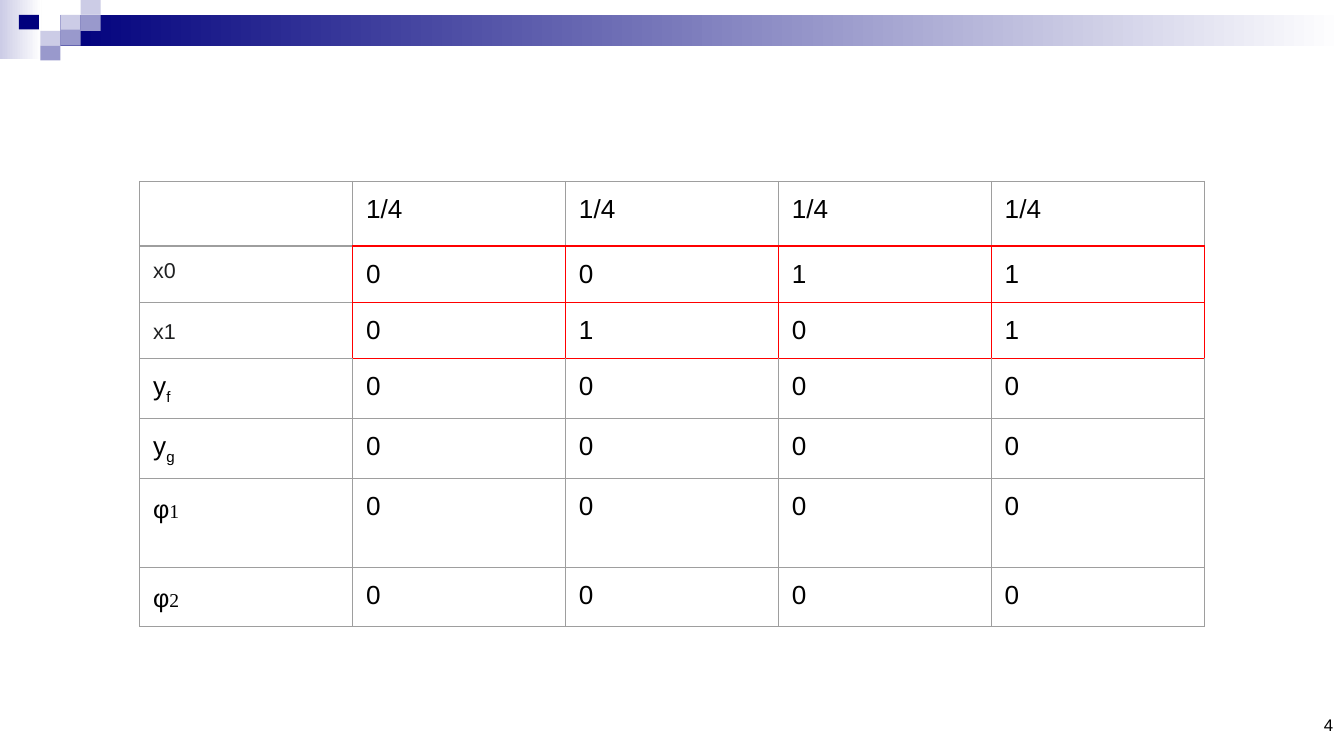
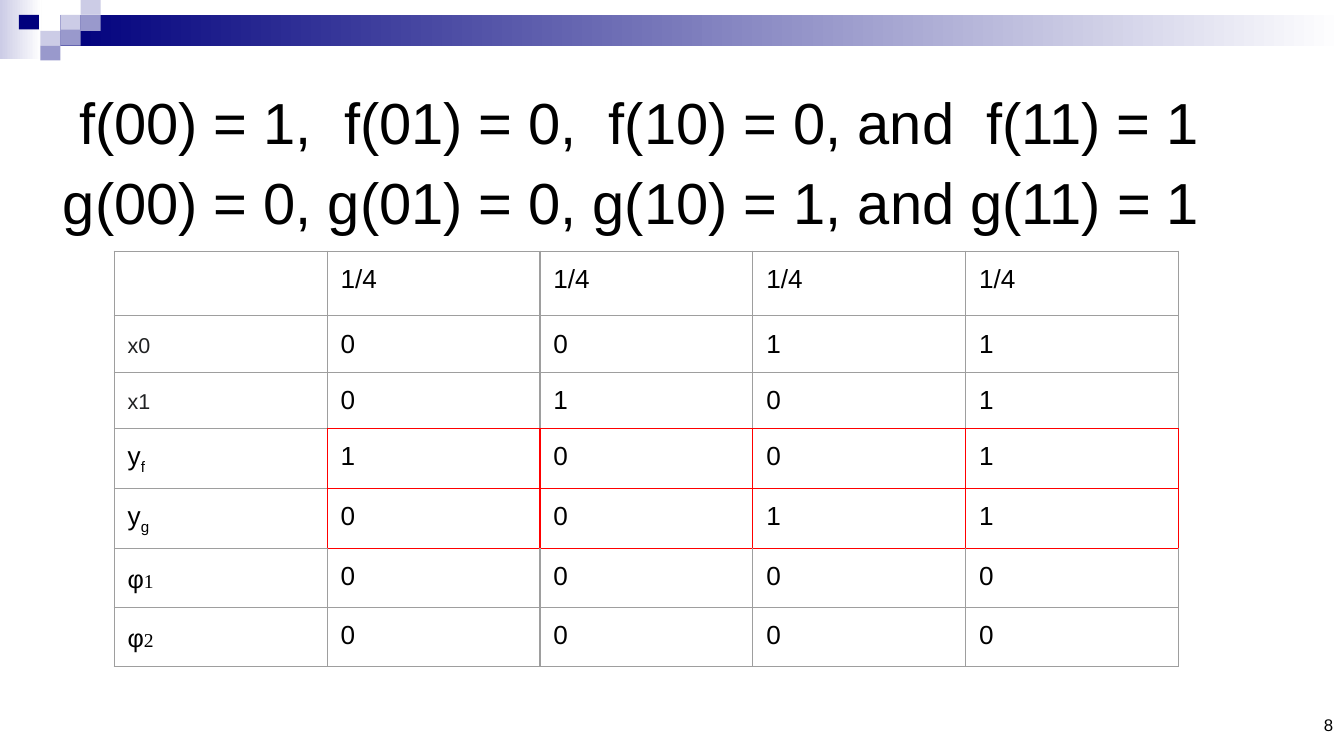
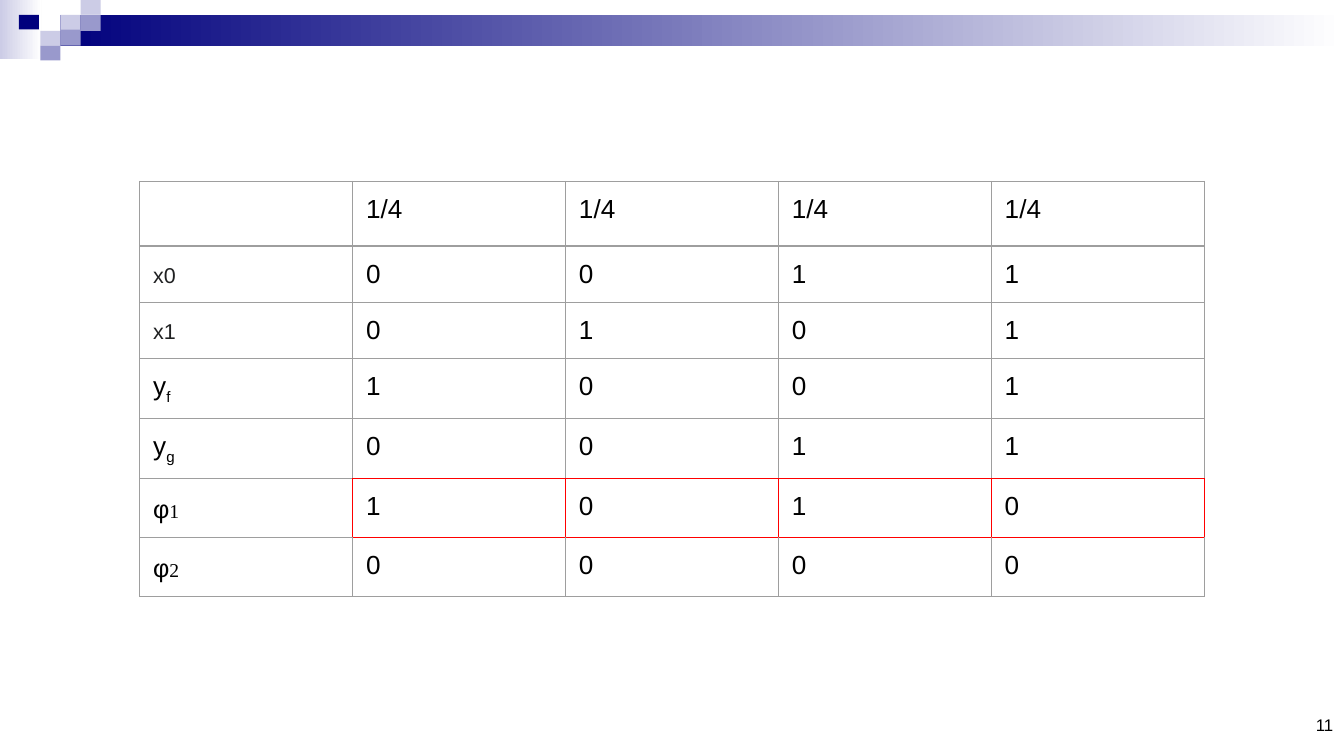
from lxml import etree
from pptx import Presentation
from pptx.dml.color import RGBColor
from pptx.enum import shapes, text
from pptx.oxml import ns
from pptx.util import Inches, Pt

HUES = {
    "navy": "00007D", "mid": "9999CC", "pale": "CCCCE6", "white": "FFFFFF",
    "black": "000000", "ink": "202122", "grid": "9E9E9E", "mark": "FF0000",
}
BODY = {"name": "Arial", "size": Pt(14), "hue": "black"}
LABEL = {**BODY, "size": Pt(11.5), "hue": "ink"}
PHI = {**BODY, "size": Pt(13.5)}
INDEX = {**BODY, "name": "Times New Roman", "size": Pt(10.5)}
PAGE = {**BODY, "size": Pt(9)}
HEAD = {**BODY, "size": Pt(31)}
SUB = {**BODY, "base": "-25000"}

SIDES = ("lnL", "lnR", "lnT", "lnB")
PADS = {"left": 0.1, "right": 0.1, "top": 0.1, "bottom": 0.08}
FADES = [
    ((0, 0, 0.31, 0.44), "pale"),
    ((0.45, 0.11, 9.55, 0.23), "navy"),
]
TILES = [
    (0.45, 0.11, 0.12, "pale"), (0.6, 0, 0.11, "pale"),
    (0.6, 0.11, 0.12, "mid"), (0.3, 0.23, 0.11, "pale"),
    (0.14, 0.11, 0.11, "navy"), (0.45, 0.22, 0.12, "mid"),
    (0.3, 0.34, 0.11, "mid"),
]
TILE = 0.15

LABELS = [
    [],
    [("x0", LABEL), (" ", BODY)],
    [("x1", LABEL), (" ", BODY)],
    [("y", BODY), ("f", SUB)],
    [("y", BODY), ("g", SUB)],
    [("φ", PHI), ("1", INDEX)],
    [("φ", PHI), ("2", INDEX)],
]
RULES = [
    " f(00) = 1,  f(01) = 0,  f(10) = 0, and  f(11) = 1",
    "g(00) = 0, g(01) = 0, g(10) = 1, and g(11) = 1",
]
ROW = 0.42
PAGES = [
    {"page": "4", "box": (1.04, 1.35, 7.92), "marks": (1, 2), "tall": {5: 0.66},
     "bits": ["0011", "0101", "0000", "0000", "0000", "0000"]},
    {"page": "8", "box": (0.85, 1.87, 7.92), "marks": (3, 4), "tall": {0: 0.46},
     "bits": ["0011", "0101", "1001", "0011", "0000", "0000"], "rules": RULES},
    {"page": "11", "box": (1.04, 1.35, 7.92), "marks": (5,), "tall": {},
     "bits": ["0011", "0101", "1001", "0011", "1010", "0000"]},
]


def hue(name):
    return RGBColor.from_string(HUES[name])


def write(para, parts):
    for words, style in parts:
        run = para.add_run()
        run.text = words
        for key, value in style.items():
            if key == "hue":
                run.font.color.rgb = hue(value)
            elif key == "base":
                run._r.get_or_add_rPr().set("baseline", value)
            else:
                setattr(run.font, key, value)


def add_text(slide, box, lines, style, pads, form, spacing=None, align=None):
    frame = slide.shapes.add_textbox(*map(Inches, box)).text_frame
    form = {
        "word_wrap": True,
        "margin_left": Inches(pads[0]), "margin_right": Inches(pads[0]),
        "margin_top": Inches(pads[1]), "margin_bottom": Inches(pads[1]),
        **form,
    }
    for key, value in form.items():
        setattr(frame, key, value)
    for i, line in enumerate(lines):
        para = frame.add_paragraph() if i else frame.paragraphs[0]
        para.line_spacing = spacing
        para.alignment = align
        write(para, [(line, style)])


def add_block(slide, box):
    shape = slide.shapes.add_shape(shapes.MSO_SHAPE.RECTANGLE, *map(Inches, box))
    shape.shadow.inherit = False
    shape.line.fill.background()
    return shape


def add_band(slide):
    for box, tone in FADES:
        fill = add_block(slide, box).fill
        fill.gradient()
        fill.gradient_angle = 0
        for stop, name, place in zip(fill.gradient_stops, (tone, "white"), (0, 1)):
            stop.color.rgb = hue(name)
            stop.position = place
    for left, top, high, tone in TILES:
        fill = add_block(slide, (left, top, TILE, high)).fill
        fill.solid()
        fill.fore_color.rgb = hue(tone)


def add_page(slide, page):
    add_text(slide, (7.67, 5.31, 2.33, 0.2), [page], PAGE, (0.08, 0.04),
             {"vertical_anchor": text.MSO_ANCHOR.BOTTOM},
             align=text.PP_ALIGN.RIGHT)


def add_rules(slide, box, lines):
    add_text(slide, box, lines, HEAD, (0.1, 0.1),
             {"auto_size": text.MSO_AUTO_SIZE.SHAPE_TO_FIT_TEXT}, spacing=1.15)


def edge(cell, tones):
    props = cell._tc.get_or_add_tcPr()
    for i, side in enumerate(SIDES):
        line = etree.Element(ns.qn("a:" + side), w=str(Pt(0.75)))
        fill = etree.SubElement(line, ns.qn("a:solidFill"))
        etree.SubElement(fill, ns.qn("a:srgbClr"), val=HUES[tones[side]])
        props.insert(i, line)


def tones_of(row, col, marks):
    data = col > 0
    hits = {
        "lnL": data and row in marks,
        "lnR": row in marks,
        "lnT": data and (row in marks or row - 1 in marks),
        "lnB": data and (row in marks or row + 1 in marks),
    }
    return {side: "mark" if hit else "grid" for side, hit in hits.items()}


def add_grid(slide, box, bits, marks, tall):
    left, top, width = box
    rows = [["1/4"] * 4] + [list(line) for line in bits]
    cols = len(rows[0]) + 1
    highs = [tall.get(i, ROW) for i in range(len(rows))]
    size = map(Inches, (left, top, width, sum(highs)))
    table = slide.shapes.add_table(len(rows), cols, *size).table
    table.first_row = table.horz_banding = False
    for col in table.columns:
        col.width = Inches(width / cols)
    for i, (label, values) in enumerate(zip(LABELS, rows)):
        table.rows[i].height = Inches(highs[i])
        if i == 1 and i in marks:
            label = label[:1]
        for j, parts in enumerate([label] + [[(value, BODY)] for value in values]):
            cell = table.cell(i, j)
            for side, pad in PADS.items():
                setattr(cell, "margin_" + side, Inches(pad))
            cell.fill.background()
            edge(cell, tones_of(i, j, marks))
            para = cell.text_frame.paragraphs[0]
            if parts and parts[0][1] is PHI:
                para.line_spacing = 1.15
            write(para, parts)


def main():
    deck = Presentation()
    deck.slide_width = Inches(10)
    deck.slide_height = deck.slide_width * 9 // 16
    for item in PAGES:
        slide = deck.slides.add_slide(deck.slide_layouts[6])
        add_band(slide)
        add_page(slide, item["page"])
        add_grid(slide, item["box"], item["bits"], item["marks"], item["tall"])
        if "rules" in item:
            add_rules(slide, (0.37, 0.47, 8.82, 1.32), item["rules"])
    deck.save("out.pptx")


if __name__ == "__main__":
    main()
